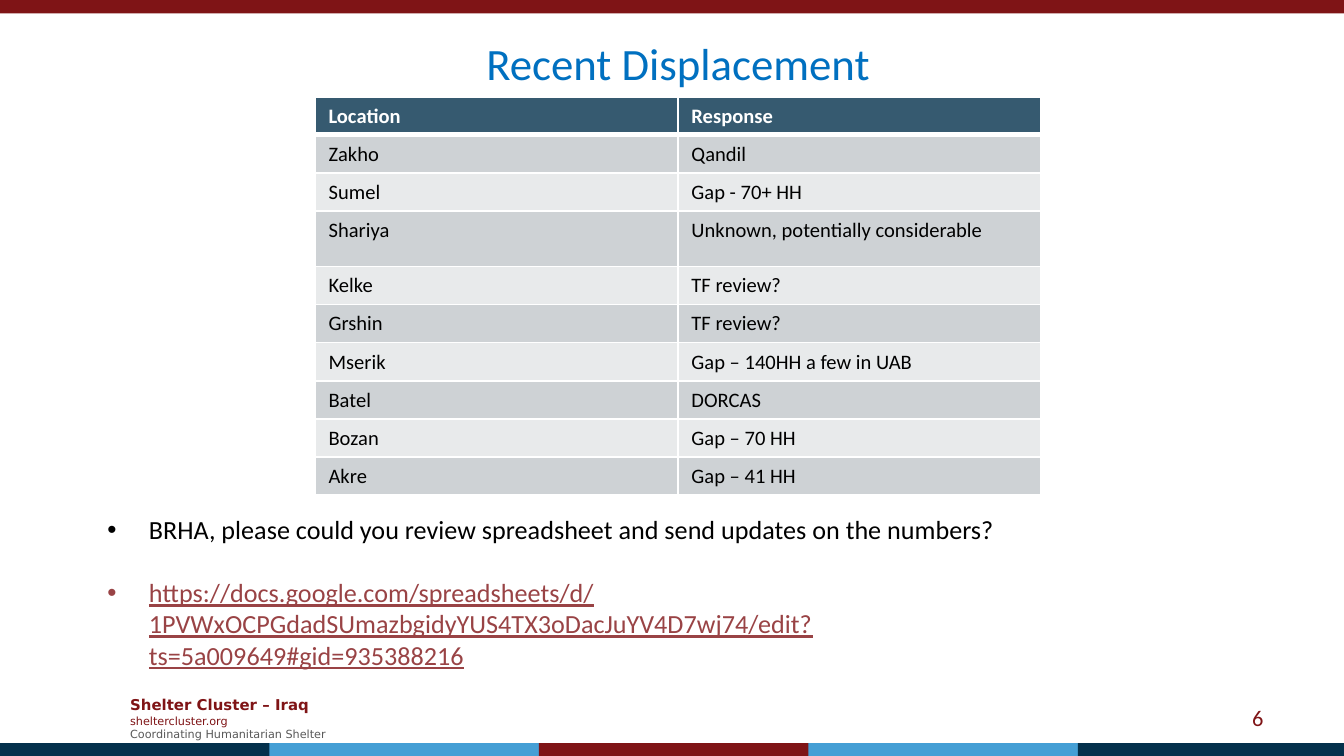
from dataclasses import dataclass

import lxml.etree
import pptx
import pptx.dml.color
import pptx.enum.shapes
import pptx.enum.text
import pptx.oxml.ns
import pptx.util

ALIGN = pptx.enum.text.PP_ALIGN
ANCHOR = pptx.enum.text.MSO_ANCHOR
PX_PER_INCH = 200
EMU_PER_PX = 914400 // PX_PER_INCH
SLIDE_WIDTH = 2000
SLIDE_HEIGHT = 1125


@dataclass(frozen=True)
class Theme:
    maroon: str = "7F1416"
    navy: str = "04314C"
    sky: str = "459FD5"
    title: str = "0070C0"
    link: str = "994345"
    grey: str = "595959"
    header: str = "365A70"
    bands: tuple[str, str] = ("CED2D5", "E8EAEB")
    black: str = "000000"
    white: str = "FFFFFF"
    body_font: str = "Calibri"
    footer_font: str = "DejaVu Sans"
    title_size: int = 24
    body_size: int = 14
    number_size: int = 12
    table_size: int = 11
    brand_size: int = 8
    footer_size: int = 6


THEME = Theme()


@dataclass(frozen=True)
class Box:
    left: int
    top: int
    width: int
    height: int

    def emu(self) -> list[pptx.util.Emu]:
        return [px(value) for value in (self.left, self.top, self.width, self.height)]


@dataclass(frozen=True)
class Line:
    text: str
    size: int
    color: str
    font: str = THEME.body_font
    bold: bool = False
    underline: bool = False
    align: ALIGN = ALIGN.LEFT
    bullet: bool = False
    space_before: int = 0


@dataclass(frozen=True)
class TextBox:
    box: Box
    lines: tuple[Line, ...]
    anchor: ANCHOR = ANCHOR.TOP


@dataclass(frozen=True)
class Bar:
    box: Box
    color: str


BULLET_INDENT = 62
BAND_WIDTH = 402
BAND_STEP = 401
BAND_COLORS = (THEME.navy, THEME.sky, THEME.maroon, THEME.sky, THEME.navy)
BARS = (
    Bar(Box(0, 0, SLIDE_WIDTH, 20), THEME.maroon),
    *(Bar(Box(index * BAND_STEP, 1106, BAND_WIDTH, 20), color)
      for index, color in enumerate(BAND_COLORS)),
)

TEXT_BOXES = (
    TextBox(Box(174, 1025, 346, 88), (
        Line("Shelter Cluster – Iraq", THEME.brand_size, THEME.maroon, THEME.footer_font, bold=True),
        Line("sheltercluster.org", THEME.footer_size, THEME.maroon, THEME.footer_font),
        Line("Coordinating Humanitarian Shelter", THEME.footer_size, THEME.grey, THEME.footer_font),
    ), ANCHOR.MIDDLE),
    TextBox(Box(1434, 1038, 466, 60), (
        Line("6", THEME.number_size, THEME.maroon, align=ALIGN.RIGHT),
    ), ANCHOR.MIDDLE),
    TextBox(Box(118, 44, 1782, 100), (
        Line("Recent Displacement", THEME.title_size, THEME.title, align=ALIGN.CENTER),
    )),
    TextBox(Box(140, 754, 1476, 256), (
        Line("BRHA, please could you review spreadsheet and send updates on the numbers?",
             THEME.body_size, THEME.black, bullet=True),
        Line("https://docs.google.com/spreadsheets/d/1PVWxOCPGdadSUmazbgidyYUS4TX3oDacJuYV4D7wj74"
             "/edit?ts=5a009649#gid=935388216",
             THEME.body_size, THEME.link, underline=True, bullet=True, space_before=17),
    )),
)

TABLE_BOX = Box(469, 144, 1080, 592)
ROW_HEIGHT = 56
TALL_ROW_HEIGHT = 82
TALL_ROW = "Shariya"
RESPONSES = (
    ("Location", "Response"),
    ("Zakho", "Qandil"),
    ("Sumel", "Gap - 70+ HH"),
    ("Shariya", "Unknown, potentially considerable"),
    ("Kelke", "TF review?"),
    ("Grshin", "TF review?"),
    ("Mserik", "Gap – 140HH a few in UAB"),
    ("Batel", "DORCAS"),
    ("Bozan", "Gap – 70 HH"),
    ("Akre", "Gap – 41 HH"),
)


def px(value: int) -> pptx.util.Emu:
    return pptx.util.Emu(value * EMU_PER_PX)


def rgb(color: str) -> pptx.dml.color.RGBColor:
    return pptx.dml.color.RGBColor.from_string(color)


def add_element(parent, tag: str, **attributes: str):
    return lxml.etree.SubElement(parent, pptx.oxml.ns.qn(tag), attributes)


def set_values(target, values: dict) -> None:
    for name, value in values.items():
        setattr(target, name, value)


def write_line(paragraph, line: Line) -> None:
    paragraph.alignment = line.align
    if line.space_before:
        paragraph.space_before = pptx.util.Pt(line.space_before)
    if line.bullet:
        properties = paragraph._p.get_or_add_pPr()
        properties.set("marL", str(px(BULLET_INDENT)))
        properties.set("indent", str(px(-BULLET_INDENT)))
        add_element(properties, "a:buFont", typeface="Arial")
        add_element(properties, "a:buChar", char="•")
    run = paragraph.add_run()
    run.text = line.text
    set_values(run.font, {
        "name": line.font,
        "size": pptx.util.Pt(line.size),
        "bold": line.bold,
        "underline": line.underline,
    })
    run.font.color.rgb = rgb(line.color)


def draw_bar(slide, bar: Bar) -> None:
    shape = slide.shapes.add_shape(pptx.enum.shapes.MSO_SHAPE.RECTANGLE, *bar.box.emu())
    shape.shadow.inherit = False
    shape.fill.solid()
    shape.fill.fore_color.rgb = rgb(bar.color)
    shape.line.fill.background()


def draw_text_box(slide, text_box: TextBox) -> None:
    frame = slide.shapes.add_textbox(*text_box.box.emu()).text_frame
    set_values(frame, {"word_wrap": True, "vertical_anchor": text_box.anchor})
    for index, line in enumerate(text_box.lines):
        write_line(frame.add_paragraph() if index else frame.paragraphs[0], line)


def draw_borders(cell, bottom_width: int) -> None:
    properties = cell._tc.get_or_add_tcPr()
    for tag, width in (("a:lnL", 1), ("a:lnR", 1), ("a:lnT", 1), ("a:lnB", bottom_width)):
        border = add_element(properties, tag, w=str(pptx.util.Pt(width)))
        add_element(add_element(border, "a:solidFill"), "a:srgbClr", val=THEME.white)


def draw_table(slide, box: Box, rows: tuple[tuple[str, str], ...]) -> None:
    table = slide.shapes.add_table(len(rows), len(rows[0]), *box.emu()).table
    for row_index, values in enumerate(rows):
        is_header = row_index == 0
        height = TALL_ROW_HEIGHT if values[0] == TALL_ROW else ROW_HEIGHT
        table.rows[row_index].height = px(height)
        fill = THEME.header if is_header else THEME.bands[(row_index - 1) % 2]
        color = THEME.white if is_header else THEME.black
        for column_index, value in enumerate(values):
            cell = table.cell(row_index, column_index)
            draw_borders(cell, 3 if is_header else 1)
            cell.fill.solid()
            cell.fill.fore_color.rgb = rgb(fill)
            write_line(cell.text_frame.paragraphs[0],
                       Line(value, THEME.table_size, color, bold=is_header))


def main() -> None:
    presentation = pptx.Presentation()
    set_values(presentation, {"slide_width": px(SLIDE_WIDTH), "slide_height": px(SLIDE_HEIGHT)})
    slide = presentation.slides.add_slide(presentation.slide_layouts[6])
    for bar in BARS:
        draw_bar(slide, bar)
    for text_box in TEXT_BOXES:
        draw_text_box(slide, text_box)
    draw_table(slide, TABLE_BOX, RESPONSES)
    presentation.save("out.pptx")


if __name__ == "__main__":
    main()
